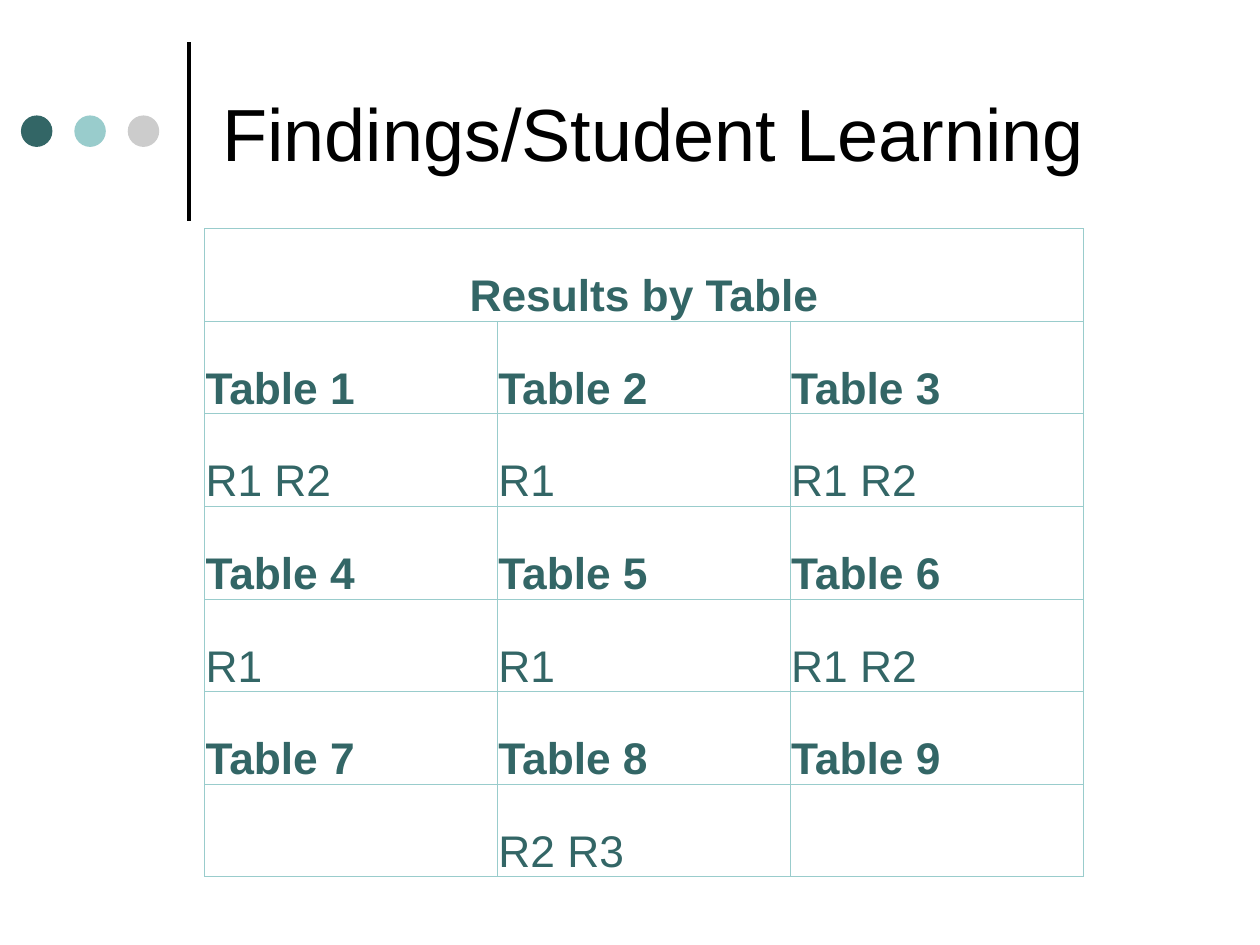
import pptx
import pptx.util
import pptx.dml.color
import pptx.enum.shapes
import pptx.enum.text
import pptx.oxml
import pptx.oxml.ns

Pt = pptx.util.Pt


def color(hex_string):
    return pptx.dml.color.RGBColor.from_string(hex_string)


def format_text(paragraph, size, hex_string, bold=False):
    for run in paragraph.runs:
        run.font.name = "Arial"
        run.font.size = Pt(size)
        run.font.bold = bold
        run.font.color.rgb = color(hex_string)


presentation = pptx.Presentation()
presentation.slide_width = Pt(1024)
presentation.slide_height = Pt(768)
slide = presentation.slides.add_slide(presentation.slide_layouts[6])
namespace = pptx.oxml.ns.nsdecls("a")

title_rule = slide.shapes.add_connector(
    pptx.enum.shapes.MSO_CONNECTOR.STRAIGHT, Pt(153.5), Pt(179.5), Pt(153.5), Pt(34)
)
title_rule.line.color.rgb = color("000000")
title_rule.line.width = Pt(3)
title_rule._element.spPr.append(pptx.oxml.parse_xml(f"<a:effectLst {namespace}/>"))

for index, dot_color in enumerate(["336666", "99CCCC", "CCCCCC"]):
    dot = slide.shapes.add_shape(
        pptx.enum.shapes.MSO_SHAPE.OVAL, Pt(17 + index * 43.4), Pt(93.8), Pt(25.6), Pt(25.6)
    )
    dot.shadow.inherit = False
    dot.fill.solid()
    dot.fill.fore_color.rgb = color(dot_color)
    dot.line.fill.background()

title = slide.shapes.add_textbox(Pt(170.7), Pt(21.5), Pt(785), Pt(171.5))
title_frame = title.text_frame
title_frame.word_wrap = True
title_frame.vertical_anchor = pptx.enum.text.MSO_ANCHOR.MIDDLE
title_frame.margin_left = title_frame.margin_right = Pt(10)
title_frame.margin_top = title_frame.margin_bottom = Pt(5)
title_frame.text = "Findings/Student Learning"
format_text(title_frame.paragraphs[0], 60, "000000")

results = [
    ["Results by Table", "", ""],
    ["Table 1", "Table 2", "Table 3"],
    ["R1 R2", "R1", "R1 R2"],
    ["Table 4", "Table 5", "Table 6"],
    ["R1", "R1", "R1 R2"],
    ["Table 7", "Table 8", "Table 9"],
    ["", "R2 R3", ""],
]
table = slide.shapes.add_table(
    len(results), 3, Pt(166.3), Pt(185.8), Pt(714), Pt(526.75)
).table
table.first_row = False
table.horz_banding = False
for column in table.columns:
    column.width = Pt(238)
for row in table.rows:
    row.height = Pt(75.25)
table.cell(0, 0).merge(table.cell(0, 2))

for row_index, row_texts in enumerate(results):
    for column_index, cell_text in enumerate(row_texts):
        cell = table.cell(row_index, column_index)
        cell.margin_left = cell.margin_right = cell.margin_top = Pt(0.75)
        cell.margin_bottom = Pt(0)
        cell.vertical_anchor = pptx.enum.text.MSO_ANCHOR.BOTTOM
        for side in ["lnL", "lnR", "lnT", "lnB"]:
            border = pptx.oxml.parse_xml(
                f'<a:{side} {namespace} w="{Pt(0.75)}"><a:solidFill>'
                f'<a:srgbClr val="99CCCC"/></a:solidFill></a:{side}>'
            )
            cell._tc.get_or_add_tcPr().append(border)
        cell.fill.background()
        if cell_text:
            cell.text_frame.text = cell_text
            paragraph = cell.text_frame.paragraphs[0]
            format_text(paragraph, 36, "336666", bold="Table" in cell_text)
            if row_index == 0:
                paragraph.alignment = pptx.enum.text.PP_ALIGN.CENTER

presentation.save("out.pptx")
